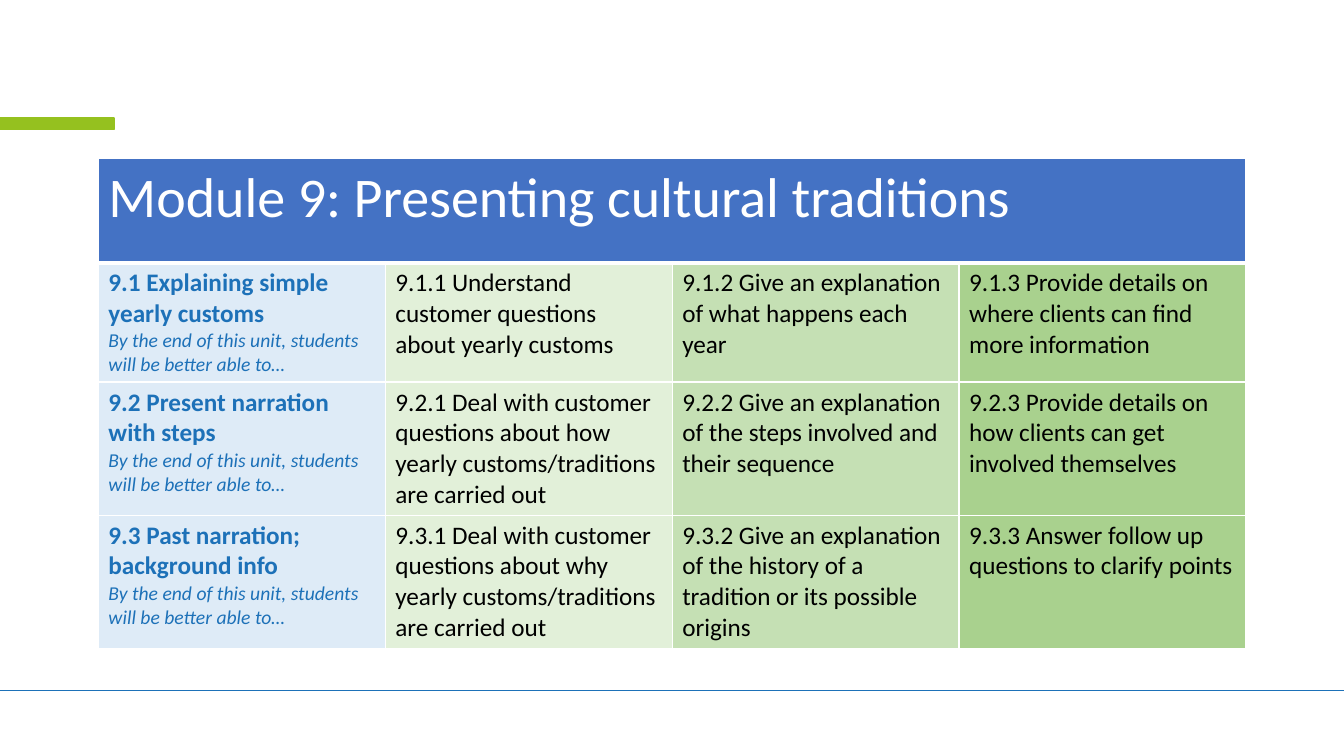
import pptx
import pptx.dml.color
import pptx.enum.shapes
import pptx.oxml
import pptx.oxml.ns
import pptx.util

Cm = pptx.util.Cm
Pt = pptx.util.Pt

COLORS = {
    "blue": "1D71B8",
    "lime": "95C11F",
    "header": "4472C4",
    "white": "FFFFFF",
    "black": "000000",
    "unit": "DEEBF7",
    "first": "E2F0D9",
    "second": "C5E0B4",
    "third": "A9D18E",
}
COLUMN_FILLS = ["unit", "first", "second", "third"]
MODULE = "Module 9: Presenting cultural traditions"
ABLE_TO = "By the end of this unit, students will be better able to…"
UNITS = [
    [
        "9.1 Explaining simple yearly customs",
        "9.1.1 Understand customer questions about yearly customs",
        "9.1.2 Give an explanation of what happens each year",
        "9.1.3 Provide details on where clients can find more information",
    ],
    [
        "9.2 Present narration with steps",
        "9.2.1 Deal with customer questions about how yearly customs/traditions are carried out",
        "9.2.2 Give an explanation of the steps involved and their sequence",
        "9.2.3 Provide details on how clients can get involved themselves",
    ],
    [
        "9.3 Past narration; background info",
        "9.3.1 Deal with customer questions about why yearly customs/traditions are carried out",
        "9.3.2 Give an explanation of the history of a tradition or its possible origins",
        "9.3.3 Answer follow up questions to clarify points",
    ],
]


def rgb(name):
    return pptx.dml.color.RGBColor.from_string(COLORS[name])


def add_run(paragraph, text, size, color, bold=False, italic=False):
    run = paragraph.add_run()
    run.text = text
    run.font.name = "Calibri"
    run.font.size = Pt(size)
    run.font.bold = bold
    run.font.italic = italic
    run.font.color.rgb = rgb(color)


deck = pptx.Presentation()
deck.slide_width = Cm(33.87)
deck.slide_height = Cm(19.05)
slide = deck.slides.add_slide(deck.slide_layouts[6])

footer_rule = slide.shapes.add_connector(
    pptx.enum.shapes.MSO_CONNECTOR.STRAIGHT, 0, Cm(17.4), deck.slide_width, Cm(17.4)
)
footer_rule.line.color.rgb = rgb("blue")
footer_rule.line.width = Pt(1)
footer_rule._element.spPr.append(pptx.oxml.parse_xml(
    f'<a:effectLst {pptx.oxml.ns.nsdecls("a")}/>'
))

accent_bar = slide.shapes.add_shape(
    pptx.enum.shapes.MSO_SHAPE.RECTANGLE, 0, Cm(2.97), Cm(2.87), Cm(0.3)
)
accent_bar.shadow.inherit = False
accent_bar.fill.solid()
accent_bar.fill.fore_color.rgb = rgb("lime")
accent_bar.line.color.rgb = rgb("lime")
accent_bar.line.width = Pt(1)

module_table = slide.shapes.add_table(
    4, 4, Cm(2.48), Cm(4), Cm(28.92), Cm(11.47)
).table
for column in module_table.columns:
    column.width = Cm(7.23)
for row, height in zip(module_table.rows, [2.62, 2.95, 2.95, 2.95]):
    row.height = Cm(height)

module_table.cell(0, 0).merge(module_table.cell(0, 3))
add_run(module_table.cell(0, 0).text_frame.paragraphs[0], MODULE, 40, "white")

for row_index, unit in enumerate(UNITS, start=1):
    for column_index, text in enumerate(unit):
        frame = module_table.cell(row_index, column_index).text_frame
        if column_index == 0:
            add_run(frame.paragraphs[0], text, 18, "blue", bold=True)
            add_run(frame.add_paragraph(), ABLE_TO, 14, "blue", italic=True)
        else:
            add_run(frame.paragraphs[0], text, 18, "black")

for row_index in range(4):
    for column_index, column_fill in enumerate(COLUMN_FILLS):
        cell = module_table.cell(row_index, column_index)
        cell.fill.solid()
        cell.fill.fore_color.rgb = rgb(column_fill if row_index else "header")
        borders = {"lnL": 1, "lnR": 1, "lnT": 1, "lnB": 1}
        if row_index == 0:
            borders["lnB"] = 3
        elif row_index == 1:
            borders["lnT"] = 3
        for position, (side, width) in enumerate(borders.items()):
            cell._tc.get_or_add_tcPr().insert(position, pptx.oxml.parse_xml(
                f'<a:{side} {pptx.oxml.ns.nsdecls("a")} w="{Pt(width)}"><a:solidFill>'
                f'<a:srgbClr val="{COLORS["white"]}"/></a:solidFill></a:{side}>'
            ))

deck.save("out.pptx")
